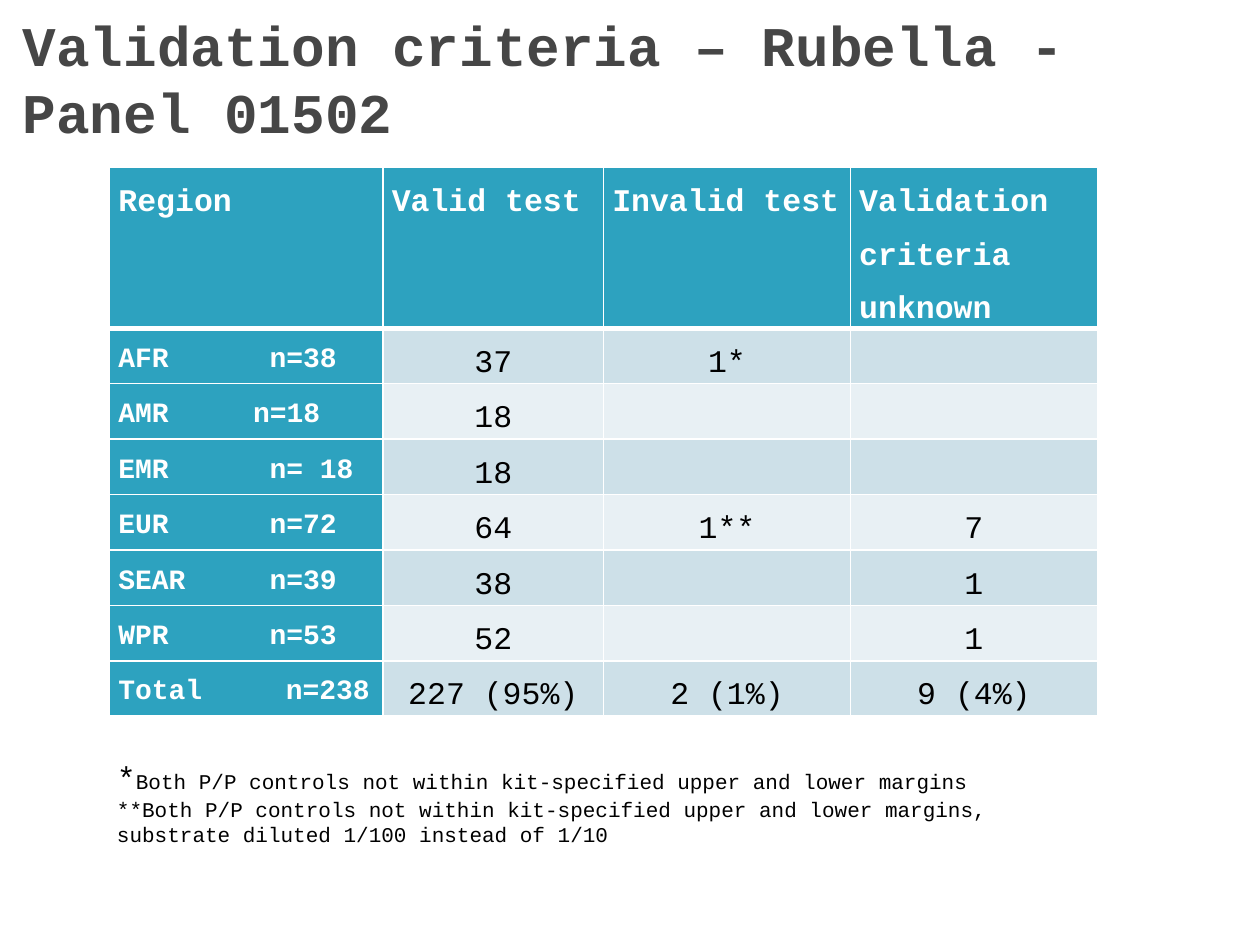
from lxml.etree import SubElement
from pptx import Presentation
from pptx.dml.color import RGBColor
from pptx.enum.text import MSO_ANCHOR, MSO_AUTO_SIZE, PP_ALIGN as Align
from pptx.oxml import parse_xml
from pptx.oxml.ns import nsdecls, qn
from pptx.util import Inches, Pt

FONT = "Courier New"
COLORS = {
    "title": "464646",
    "text": "000000",
    "white": "FFFFFF",
    "heading": "2DA2BF",
    "band_dark": "CDE0E8",
    "band_light": "E8F0F4",
}

HEADINGS = ["Region", "Valid test", "Invalid test", "Validation criteria unknown"]
# Region, sample size, tab stop of the sample size, results
REGIONS = [
    ("AFR", "n=38", 1.2, ["37", "1*", ""]),
    ("AMR", "n=18", 1.07, ["18", "", ""]),
    ("EMR", "n= 18", 1.2, ["18", "", ""]),
    ("EUR", "n=72", 1.2, ["64", "1**", "7"]),
    ("SEAR", "n=39", 1.2, ["38", "", "1"]),
    ("WPR", "n=53", 1.2, ["52", "", "1"]),
    ("Total", "n=238", 1.33, ["227 (95%)", "2 (1%)", "9 (4%)"]),
]
COLUMN_WIDTHS = [2.17, 1.75, 1.96, 1.96]
HEADER_HEIGHT, ROW_HEIGHT = 0.92, 0.44


def add_run(paragraph, text, size, color="text", bold=False):
    run = paragraph.add_run()
    run.text = text
    run.font.name = FONT
    run.font.size = Pt(size)
    run.font.bold = bold
    run.font.color.rgb = RGBColor.from_string(COLORS[color])


def set_borders(cell, top=1, bottom=1):
    properties = cell._tc.get_or_add_tcPr()
    widths = {"lnL": 1, "lnR": 1, "lnT": top, "lnB": bottom}
    for position, (side, width) in enumerate(widths.items()):
        properties.insert(position, parse_xml(
            f'<a:{side} {nsdecls("a")} w="{Pt(width)}"><a:solidFill>'
            f'<a:srgbClr val="{COLORS["white"]}"/></a:solidFill></a:{side}>'))


def fill_cell(cell, text, fill, size=18, color="text", bold=False,
              align=Align.LEFT, tab=None, top=1, bottom=1):
    cell.margin_left = cell.margin_right = Inches(0.07)
    cell.margin_top = cell.margin_bottom = 0
    cell.fill.solid()
    cell.fill.fore_color.rgb = RGBColor.from_string(COLORS[fill])
    set_borders(cell, top, bottom)
    paragraph = cell.text_frame.paragraphs[0]
    paragraph.alignment = align
    if not text:
        return
    paragraph.line_spacing = 1.5
    if tab:
        tabs = SubElement(paragraph._p.get_or_add_pPr(), qn("a:tabLst"))
        SubElement(tabs, qn("a:tab"), pos=str(Inches(tab)), algn="l")
    add_run(paragraph, text, size, color, bold)


def add_title(slide, text):
    title = slide.shapes.title
    title.left, title.top = Inches(0.08), Inches(0.17)
    title.width, title.height = Inches(9.75), Inches(0.89)
    frame = title.text_frame
    frame.word_wrap = True
    frame.auto_size = MSO_AUTO_SIZE.NONE
    frame.vertical_anchor = MSO_ANCHOR.MIDDLE
    frame.paragraphs[0].alignment = Align.LEFT
    add_run(frame.paragraphs[0], text, 32, "title", True)


def add_results_table(slide):
    height = HEADER_HEIGHT + ROW_HEIGHT * len(REGIONS)
    table = slide.shapes.add_table(
        len(REGIONS) + 1, len(HEADINGS), Inches(0.87), Inches(1.33),
        Inches(sum(COLUMN_WIDTHS)), Inches(height)).table
    for column, width in zip(table.columns, COLUMN_WIDTHS):
        column.width = Inches(width)
    for index, row in enumerate(table.rows):
        row.height = Inches(ROW_HEIGHT if index else HEADER_HEIGHT)

    # Header row with a heavier rule below it
    for column, heading in enumerate(HEADINGS):
        fill_cell(table.cell(0, column), heading, "heading",
                  color="white", bold=True, bottom=3)

    # One banded row per region
    for row, (region, sample, tab, results) in enumerate(REGIONS, start=1):
        top = 3 if row == 1 else 1
        band = "band_dark" if row % 2 else "band_light"
        fill_cell(table.cell(row, 0), f"{region}\t{sample}", "heading", size=16,
                  color="white", bold=True, tab=tab, top=top)
        for column, result in enumerate(results, start=1):
            fill_cell(table.cell(row, column), result, band,
                      align=Align.CENTER, top=top)


def add_footnotes(slide):
    frame = slide.shapes.add_textbox(
        Inches(0.83), Inches(5.97), Inches(7.75), Inches(0.81)).text_frame
    frame.word_wrap = True
    frame.auto_size = MSO_AUTO_SIZE.SHAPE_TO_FIT_TEXT
    controls_note = frame.paragraphs[0]
    add_run(controls_note, "*", 18)
    add_run(controls_note, "Both P/P controls not within kit-specified upper "
            "and lower margins", 12)
    add_run(frame.add_paragraph(), "**Both P/P controls not within kit-specified "
            "upper and lower margins, substrate diluted 1/100 instead of 1/10", 12)


def main():
    deck = Presentation()
    deck.slide_width, deck.slide_height = Inches(10), Inches(7.5)
    slide = deck.slides.add_slide(deck.slide_layouts[5])
    add_title(slide, "Validation criteria – Rubella - Panel 01502")
    add_results_table(slide)
    add_footnotes(slide)
    deck.save("out.pptx")


if __name__ == "__main__":
    main()
